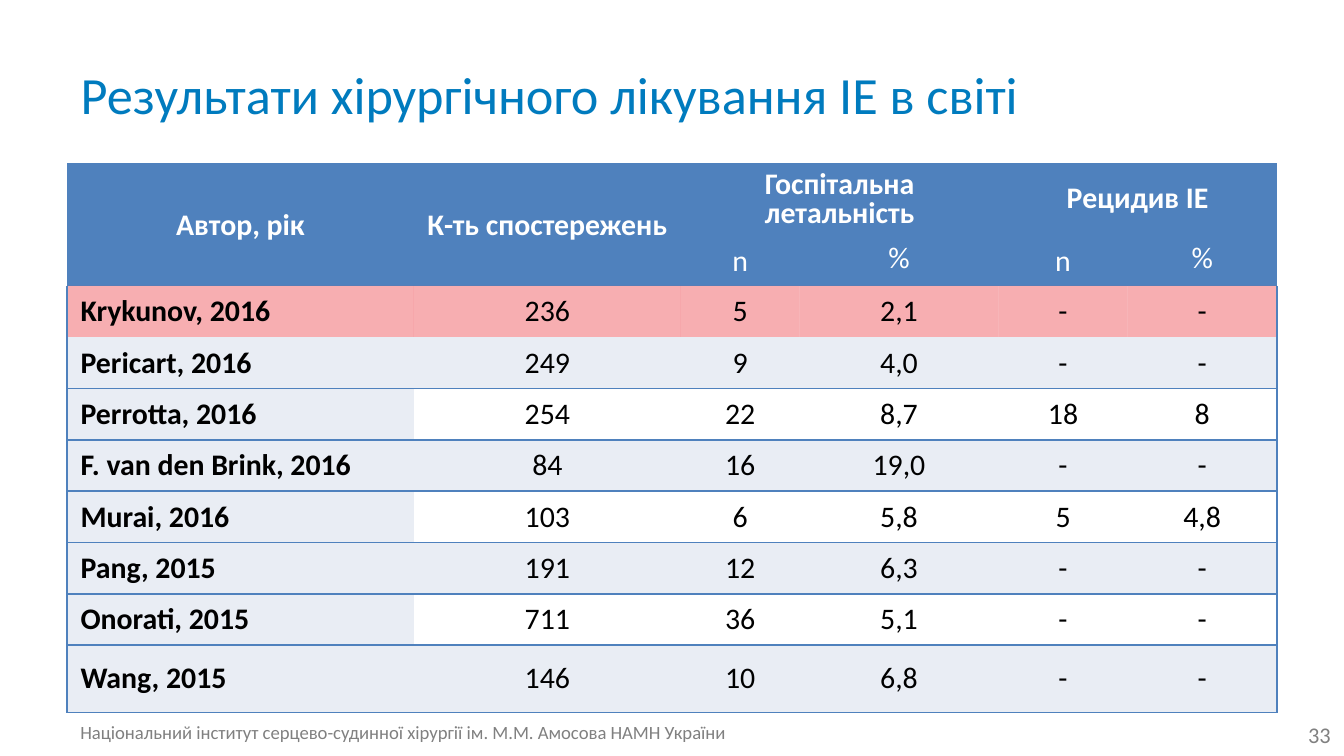
"""Build a slide with a table of surgical outcomes in infective endocarditis."""
from dataclasses import dataclass

from lxml.etree import SubElement
from pptx import Presentation
from pptx.dml.color import RGBColor
from pptx.enum.text import MSO_ANCHOR, MSO_AUTO_SIZE, PP_ALIGN
from pptx.oxml import parse_xml
from pptx.oxml.ns import nsdecls, qn
from pptx.table import _Cell
from pptx.text.text import TextFrame
from pptx.util import Cm, Pt


@dataclass(frozen=True)
class Theme:
    font: str = "Calibri"
    title: str = "007BBE"
    grey: str = "808080"
    accent: str = "4F81BD"
    band: str = "E9EDF4"
    mark: str = "EE454C"
    white: str = "FFFFFF"
    black: str = "000000"
    title_size: int = 28
    table_size: int = 16
    number_size: int = 12
    footer_size: int = 10
    mark_alpha: int = 43


@dataclass(frozen=True)
class Box:
    left: float
    top: float
    width: float
    height: float

    def lengths(self) -> tuple:
        """Return the four lengths in slide units."""
        return Cm(self.left), Cm(self.top), Cm(self.width), Cm(self.height)


@dataclass(frozen=True)
class Head:
    row: int
    col: int
    text: str
    rows: int = 1
    cols: int = 1
    bold: bool = True
    spacing: float = 1.0


@dataclass(frozen=True)
class Study:
    author: str
    cases: str
    deaths: str
    death_rate: str
    relapses: str = "-"
    relapse_rate: str = "-"

    def values(self) -> tuple:
        """Return the cell texts from left to right."""
        return (self.author, self.cases, self.deaths, self.death_rate,
                self.relapses, self.relapse_rate)


T = Theme()
COLS = (6.55, 5.05, 2.24, 3.76, 2.44, 2.82)
HEAD_ROWS = (1.35, 0.94)
BODY_ROW, LAST_ROW = 0.97, 1.27
NO_STYLE = "{2D5ABB26-0587-4C30-8999-92F81FD0307C}"

HEADS = [
    Head(0, 0, "Автор, рік", rows=2),
    Head(0, 1, "К-ть спостережень", rows=2),
    Head(0, 2, "Госпітальна летальність", cols=2, spacing=0.8),
    Head(0, 4, "Рецидив ІЕ", cols=2, spacing=0.8),
    *(Head(1, col + i, text, bold=False, spacing=spacing)
      for col in (2, 4) for i, (text, spacing) in enumerate((("n", 1.0), ("%", 0.7)))),
]
STUDIES = [
    Study("Krykunov, 2016", "236", "5", "2,1"),
    Study("Pericart, 2016", "249", "9", "4,0"),
    Study("Perrotta, 2016", "254", "22", "8,7", "18", "8"),
    Study("F.\u00a0van den Brink, 2016".replace("\u00a0", " "), "84", "16", "19,0"),
    Study("Murai, 2016", "103", "6", "5,8", "5", "4,8"),
    Study("Pang, 2015", "191", "12", "6,3"),
    Study("Onorati, 2015", "711", "36", "5,1"),
    Study("Wang, 2015", "146", "10", "6,8"),
]


def write(tf: TextFrame, text: str, size: int, color: str, bold: bool = False,
          align: PP_ALIGN = PP_ALIGN.LEFT, spacing: float = 1.0) -> None:
    """Put one formatted paragraph into a text frame."""
    p = tf.paragraphs[0]
    for name, value in {"alignment": align, "line_spacing": spacing, "space_before": Pt(0)}.items():
        setattr(p, name, value)
    r = p.add_run()
    r.text = text
    for name, value in {"name": T.font, "size": Pt(size), "bold": bold}.items():
        setattr(r.font, name, value)
    r.font.color.rgb = RGBColor.from_string(color)


def add_label(s, box: Box, text: str, size: int, align: PP_ALIGN, anchor: MSO_ANCHOR) -> None:
    """Add a grey text box at the foot of the slide."""
    tf = s.shapes.add_textbox(*box.lengths()).text_frame
    for name, value in {"word_wrap": True, "vertical_anchor": anchor}.items():
        setattr(tf, name, value)
    write(tf, text, size, T.grey, align=align)


def paint(cell: _Cell, color: str, alpha: int = 100) -> None:
    """Fill a cell, centre it vertically and set its opacity."""
    cell.vertical_anchor = MSO_ANCHOR.MIDDLE
    cell.fill.solid()
    cell.fill.fore_color.rgb = RGBColor.from_string(color)
    if alpha < 100:
        srgb = next(cell._tc.tcPr.iter(qn("a:srgbClr")))
        SubElement(srgb, qn("a:alpha")).set("val", str(alpha * 1000))


def add_borders(cell: _Cell, sides: str) -> None:
    """Draw accent lines on the named sides, given in L, R, T, B order."""
    for i, side in enumerate(sides):
        cell._tc.tcPr.insert(i, parse_xml(
            f'<a:ln{side} {nsdecls("a")} w="12700"><a:solidFill>'
            f'<a:srgbClr val="{T.accent}"/></a:solidFill></a:ln{side}>'))


def add_results(s, box: Box) -> None:
    """Add the table with its two header rows and one row per study."""
    heights = (*HEAD_ROWS, *[BODY_ROW] * (len(STUDIES) - 1), LAST_ROW)
    tbl = s.shapes.add_table(len(heights), len(COLS), *box.lengths()).table
    tbl._tbl.tblPr.find(qn("a:tableStyleId")).text = NO_STYLE
    for col, width in zip(tbl.columns, COLS):
        col.width = Cm(width)
    for row, height in zip(tbl.rows, heights):
        row.height = Cm(height)

    for row in range(len(HEAD_ROWS)):
        for col in range(len(COLS)):
            paint(tbl.cell(row, col), T.accent)
            add_borders(tbl.cell(row, col), "" if row else "T")
    for h in HEADS:
        cell = tbl.cell(h.row, h.col)
        if h.rows * h.cols > 1:
            cell.merge(tbl.cell(h.row + h.rows - 1, h.col + h.cols - 1))
        write(cell.text_frame, h.text, T.table_size, T.white, h.bold, PP_ALIGN.CENTER, h.spacing)

    for i, study in enumerate(STUDIES):
        for col, text in enumerate(study.values()):
            cell, first = tbl.cell(i + len(HEAD_ROWS), col), col == 0
            if i == 0:
                paint(cell, T.mark, T.mark_alpha)
            else:
                paint(cell, T.band if first or i % 2 else T.white)
            write(cell.text_frame, text, T.table_size, T.black, first,
                  PP_ALIGN.LEFT if first else PP_ALIGN.CENTER)
            add_borders(cell, ("L" if first else "") + ("R" if col == len(COLS) - 1 else "")
                        + ("T" if i > 1 else "") + ("B" if i > 0 else ""))


def main() -> None:
    """Build and save the slide."""
    prs = Presentation()
    prs.slide_width, prs.slide_height = Cm(25.4), Cm(14.29)
    s = prs.slides.add_slide(prs.slide_layouts[5])
    sp = s.shapes.title
    sp.left, sp.top, sp.width, sp.height = Box(1.27, 0.58, 20.96, 2.39).lengths()
    sp.text_frame.vertical_anchor = MSO_ANCHOR.MIDDLE
    sp.text_frame.auto_size = MSO_AUTO_SIZE.NONE
    write(sp.text_frame, "Результати хірургічного лікування ІЕ в світі", T.title_size, T.title)
    add_results(s, Box(1.27, 3.1, sum(COLS), 10.31))
    add_label(s, Box(1.27, 13.51, 13.54, 0.69),
              "Національний інститут серцево-судинної хірургії ім. М.М. Амосова НАМН України",
              T.footer_size, PP_ALIGN.LEFT, MSO_ANCHOR.TOP)
    add_label(s, Box(19.48, 13.51, 5.92, 0.76), "33", T.number_size,
              PP_ALIGN.RIGHT, MSO_ANCHOR.MIDDLE)
    prs.save("out.pptx")


if __name__ == "__main__":
    main()
